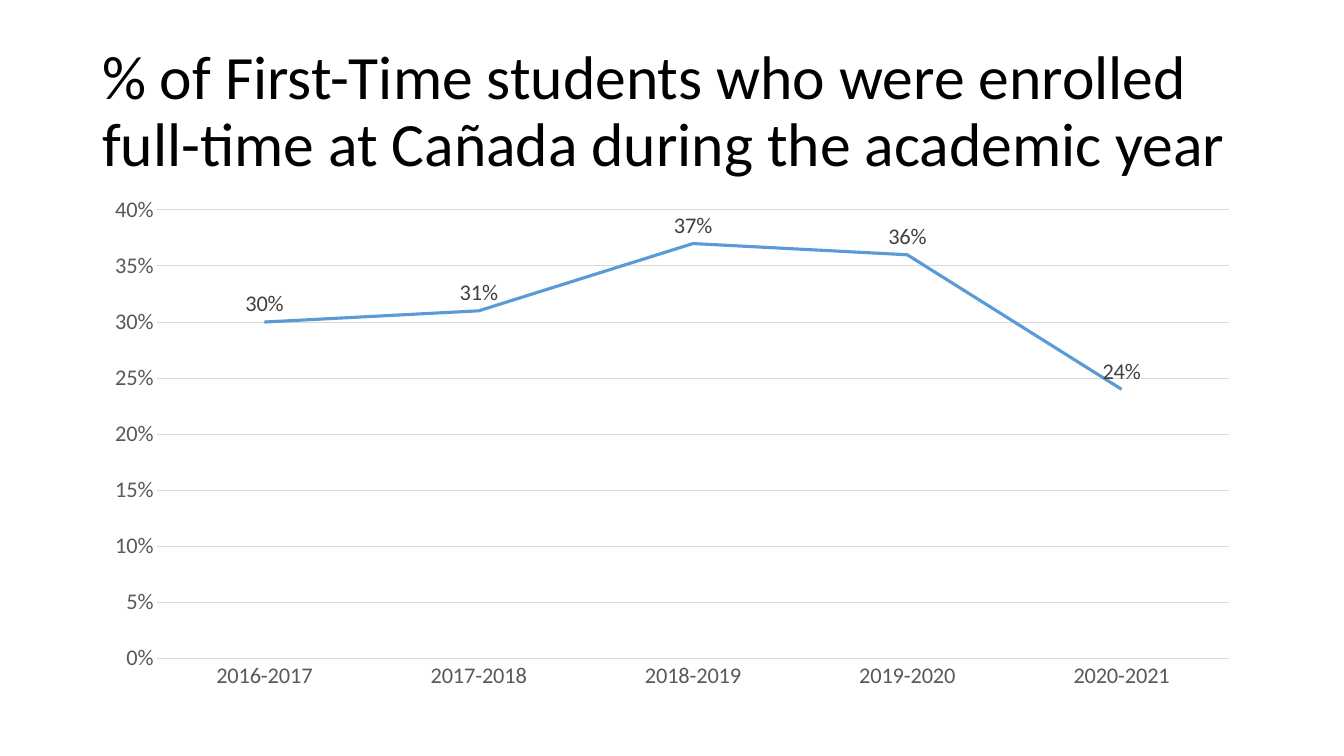
"""Build a slide with a line chart of full-time enrolment by academic year."""
import pptx
import pptx.chart.data
import pptx.dml.color
import pptx.enum.chart
import pptx.enum.text
import pptx.util

TITLE = "% of First-Time students who were enrolled full-time at Cañada during the academic year"
FULL_TIME_SHARE = {
    "2016-2017": 0.30,
    "2017-2018": 0.31,
    "2018-2019": 0.37,
    "2019-2020": 0.36,
    "2020-2021": 0.24,
}

PAGE_SIZE = (1344, 756)
TITLE_BOX = (92, 40, 1160, 146)
CHART_BOX = (92, 186, 1160, 514)
PX_PER_INCH = 100.8

FONT = "Calibri"
BLACK = pptx.dml.color.RGBColor(0x00, 0x00, 0x00)
LABEL_GREY = pptx.dml.color.RGBColor(0x40, 0x40, 0x40)
AXIS_GREY = pptx.dml.color.RGBColor(0x59, 0x59, 0x59)
GRID_GREY = pptx.dml.color.RGBColor(0xD9, 0xD9, 0xD9)
LINE_BLUE = pptx.dml.color.RGBColor(0x5B, 0x9B, 0xD5)


def emu(lengths):
    return [pptx.util.Inches(length / PX_PER_INCH) for length in lengths]


def set_font(font, size, color):
    font.name = FONT
    font.size = pptx.util.Pt(size)
    font.color.rgb = color


def set_line(line, color, width):
    line.color.rgb = color
    line.width = pptx.util.Pt(width)


def add_title(page):
    box = page.shapes.title
    box.left, box.top, box.width, box.height = emu(TITLE_BOX)
    frame = box.text_frame
    frame.word_wrap = True
    frame.auto_size = pptx.enum.text.MSO_AUTO_SIZE.NONE
    frame.vertical_anchor = pptx.enum.text.MSO_ANCHOR.MIDDLE
    para = frame.paragraphs[0]
    para.alignment = pptx.enum.text.PP_ALIGN.LEFT
    para.line_spacing = 0.9
    span = para.add_run()
    span.text = TITLE
    set_font(span.font, 44, BLACK)


def style_axes(chart):
    for axis in (chart.category_axis, chart.value_axis):
        axis.major_tick_mark = pptx.enum.chart.XL_TICK_MARK.NONE
        axis.minor_tick_mark = pptx.enum.chart.XL_TICK_MARK.NONE
        set_font(axis.tick_labels.font, 16, AXIS_GREY)
    set_line(chart.category_axis.format.line, GRID_GREY, 0.75)
    shares = chart.value_axis
    shares.minimum_scale, shares.maximum_scale, shares.major_unit = 0, 0.4, 0.05
    shares.format.line.fill.background()
    shares.has_major_gridlines = True
    set_line(shares.major_gridlines.format.line, GRID_GREY, 0.75)
    shares.tick_labels.number_format = "0%"
    shares.tick_labels.number_format_is_linked = False


def style_series(series):
    series.smooth = False
    series.marker.style = pptx.enum.chart.XL_MARKER_STYLE.NONE
    set_line(series.format.line, LINE_BLUE, 2.25)
    labels = series.data_labels
    labels.show_value = True
    labels.number_format = "0%"
    labels.number_format_is_linked = False
    labels.position = pptx.enum.chart.XL_LABEL_POSITION.ABOVE
    set_font(labels.font, 16, LABEL_GREY)


def add_share_chart(page):
    data = pptx.chart.data.CategoryChartData(number_format="0%")
    data.categories = list(FULL_TIME_SHARE)
    data.add_series("Series 1", list(FULL_TIME_SHARE.values()))
    kind = pptx.enum.chart.XL_CHART_TYPE.LINE
    chart = page.shapes.add_chart(kind, *emu(CHART_BOX), data).chart
    chart.has_title = False
    chart.has_legend = False
    set_font(chart.font, 16, BLACK)
    chart.plots[0].vary_by_categories = False
    style_axes(chart)
    style_series(chart.plots[0].series[0])


def main():
    deck = pptx.Presentation()
    deck.slide_width, deck.slide_height = emu(PAGE_SIZE)
    page = deck.slides.add_slide(deck.slide_layouts.get_by_name("Title Only"))
    add_title(page)
    add_share_chart(page)
    deck.save("out.pptx")


if __name__ == "__main__":
    main()
